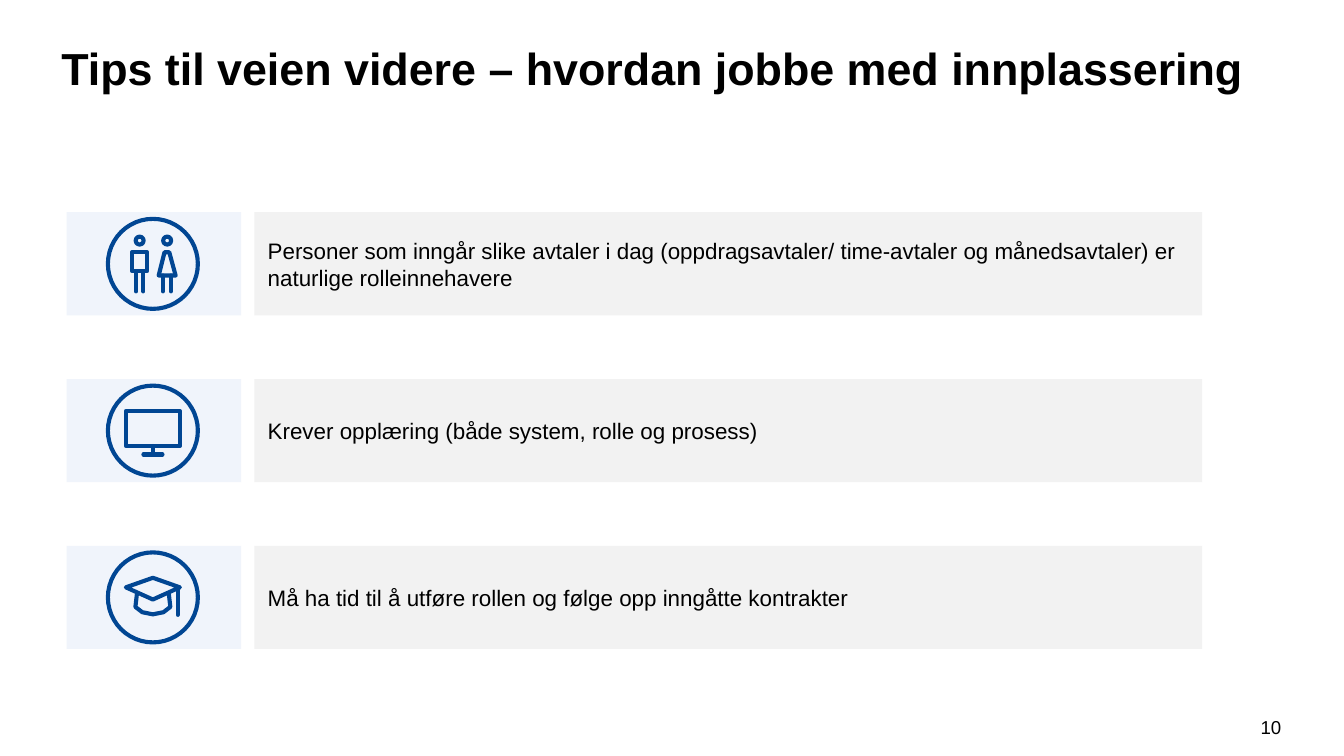
from dataclasses import dataclass

from lxml import etree
from pptx import Presentation
from pptx.dml.color import RGBColor
from pptx.enum.shapes import MSO_CONNECTOR, MSO_SHAPE
from pptx.enum.text import MSO_ANCHOR, PP_ALIGN
from pptx.oxml.ns import qn
from pptx.util import Cm, Pt

RECTANGLE, OVAL = MSO_SHAPE.RECTANGLE, MSO_SHAPE.OVAL
STRAIGHT = MSO_CONNECTOR.STRAIGHT
TOP, MIDDLE = MSO_ANCHOR.TOP, MSO_ANCHOR.MIDDLE
LEFT, CENTER = PP_ALIGN.LEFT, PP_ALIGN.CENTER


@dataclass(frozen=True)
class Theme:
    font: str = "Arial"
    text: RGBColor = RGBColor(0x00, 0x00, 0x00)
    icon: RGBColor = RGBColor(0x01, 0x46, 0x93)
    tile: RGBColor = RGBColor(0xF0, 0xF4, 0xFB)
    panel: RGBColor = RGBColor(0xF2, 0xF2, 0xF2)
    title_size: Pt = Pt(24)
    body_size: Pt = Pt(12)
    number_size: Pt = Pt(10)
    stroke: Pt = Pt(2.2)


THEME = Theme()

# Row grid, in centimetres
ROW_TOP, ROW_PITCH, ROW_HEIGHT = 4.01, 3.15, 1.95
TILE_LEFT, TILE_WIDTH = 1.26, 3.3
PANEL_LEFT, PANEL_WIDTH = 4.81, 17.91
ICON_X, RING_SIZE = 2.89, 1.7


def set_attributes(target, values):
    for name, value in values.items():
        setattr(target, name, value)


def write_text(shape, text, size, bold=False, align=LEFT, anchor=TOP):
    frame = shape.text_frame
    set_attributes(frame, {"word_wrap": True, "vertical_anchor": anchor})
    paragraph = frame.paragraphs[0]
    paragraph.alignment = align
    run = paragraph.add_run()
    run.text = text
    set_attributes(run.font, {"name": THEME.font, "size": size, "bold": bold})
    run.font.color.rgb = THEME.text


def add_text(slide, left, top, width, height, text, size, **options):
    box = slide.shapes.add_textbox(Cm(left), Cm(top), Cm(width), Cm(height))
    write_text(box, text, size, **options)
    return box


def add_block(slide, left, top, width, color):
    block = slide.shapes.add_shape(
        RECTANGLE, Cm(left), Cm(top), Cm(width), Cm(ROW_HEIGHT))
    block.shadow.inherit = False
    block.fill.solid()
    block.fill.fore_color.rgb = color
    block.line.fill.background()
    return block


class Icon:
    """Grouped line drawing; coordinates are centimetres from its centre."""

    def __init__(self, slide, x, y):
        self.shapes = slide.shapes.add_group_shape().shapes
        self.x, self.y = x, y
        self.circle(0, 0, RING_SIZE)

    def point(self, x, y):
        return Cm(self.x + x), Cm(self.y + y)

    def stroke(self, shape):
        shape.line.color.rgb = THEME.icon
        shape.line.width = THEME.stroke
        outline = shape._element.spPr.get_or_add_ln()
        outline.set("cap", "rnd")
        etree.SubElement(outline, qn("a:round"))

    def preset(self, kind, left, top, width, height):
        shape = self.shapes.add_shape(
            kind, *self.point(left, top), Cm(width), Cm(height))
        shape.shadow.inherit = False
        shape.fill.background()
        self.stroke(shape)

    def circle(self, x, y, size):
        self.preset(OVAL, x - size / 2, y - size / 2, size, size)

    def line(self, x1, y1, x2, y2):
        connector = self.shapes.add_connector(
            STRAIGHT, *self.point(x1, y1), *self.point(x2, y2))
        self.stroke(connector)
        etree.SubElement(connector._element.spPr, qn("a:effectLst"))

    def outline(self, points, close=True):
        start, *others = [self.point(x, y) for x, y in points]
        builder = self.shapes.build_freeform(*start)
        builder.add_line_segments(others, close=close)
        shape = builder.convert_to_shape()
        shape.shadow.inherit = False
        shape.fill.background()
        self.stroke(shape)


def draw_people(icon):
    for head_x in (-0.25, 0.27):
        icon.circle(head_x, -0.44, 0.15)
    # Torso and dress
    icon.preset(RECTANGLE, -0.39, -0.22, 0.28, 0.36)
    icon.outline([(0.22, -0.22), (0.31, -0.22), (0.43, 0.22), (0.11, 0.22)])
    # Legs
    for x, top in ((-0.32, 0.14), (-0.18, 0.14), (0.19, 0.22), (0.34, 0.22)):
        icon.line(x, top, x, 0.52)


def draw_monitor(icon):
    icon.preset(RECTANGLE, -0.51, -0.37, 1.02, 0.66)
    icon.line(0, 0.29, 0, 0.45)
    icon.line(-0.18, 0.45, 0.18, 0.45)


def draw_graduation_cap(icon):
    icon.outline([(0, -0.37), (0.51, -0.19), (0, 0.04), (-0.51, -0.19)])
    # Cap below the board, mirrored around its middle
    side = [(-0.3, -0.08), (-0.33, 0.18), (-0.2, 0.28)]
    mirrored = [(-x, y) for x, y in reversed(side)]
    icon.outline(side + [(0, 0.32)] + mirrored, close=False)
    # Tassel
    icon.line(0.47, -0.17, 0.47, 0.33)


ROWS = [
    ("Personer som inngår slike avtaler i dag (oppdragsavtaler/ time-avtaler "
     "og månedsavtaler) er naturlige rolleinnehavere", draw_people),
    ("Krever opplæring (både system, rolle og prosess)", draw_monitor),
    ("Må ha tid til å utføre rollen og følge opp inngåtte kontrakter",
     draw_graduation_cap),
]


def add_row(slide, top, text, draw_icon):
    add_block(slide, TILE_LEFT, top, TILE_WIDTH, THEME.tile)
    panel = add_block(slide, PANEL_LEFT, top, PANEL_WIDTH, THEME.panel)
    write_text(panel, text, THEME.body_size, anchor=MIDDLE)
    draw_icon(Icon(slide, ICON_X, top + ROW_HEIGHT / 2))


def main():
    presentation = Presentation()
    set_attributes(presentation,
                   {"slide_width": Cm(25.4), "slide_height": Cm(14.28)})
    slide = presentation.slides.add_slide(presentation.slide_layouts[6])

    # Title and page number
    title = add_text(slide, 0.91, 0.58, 23.29, 2.31,
                     "Tips til veien videre – hvordan jobbe med innplassering",
                     THEME.title_size, bold=True)
    title.text_frame.margin_top = Cm(0.19)
    add_text(slide, 23.55, 13.39, 0.94, 0.76, "10",
             THEME.number_size, align=CENTER)

    # Tips
    for index, (text, draw_icon) in enumerate(ROWS):
        add_row(slide, ROW_TOP + index * ROW_PITCH, text, draw_icon)

    presentation.save("out.pptx")


if __name__ == "__main__":
    main()
